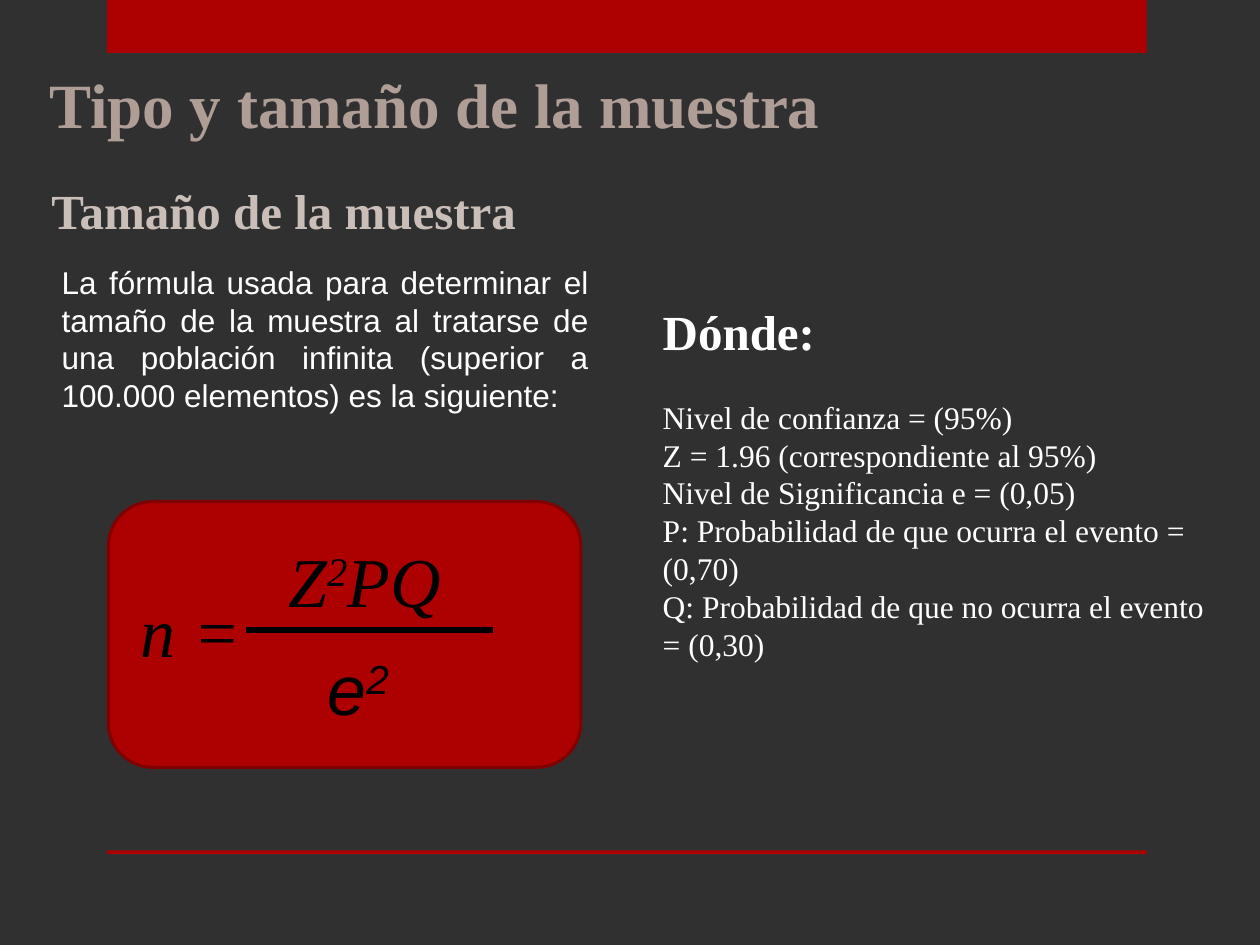
from pptx import Presentation, util as u
from pptx.dml.color import RGBColor
from pptx.enum import shapes, text
from pptx.oxml.ns import qn
from lxml import etree

COLORS = {"bg": "303030", "red": "AD0101", "border": "800101", "title": "AF9E95",
          "subtitle": "CABFB8", "white": "FFFFFF", "black": "000000"}
SERIF, SANS = "Times New Roman", "Arial"
SHAPE = shapes.MSO_SHAPE
TOP, MIDDLE = text.MSO_ANCHOR.TOP, text.MSO_ANCHOR.MIDDLE
LEFT, JUSTIFY = text.PP_ALIGN.LEFT, text.PP_ALIGN.JUSTIFY


def color(name):
    return RGBColor.from_string(COLORS[name])


class Deck:
    """Holds the style and the current slide; lengths are percentages of its size."""

    def __init__(self, width, height):
        self.prs = Presentation()
        self.prs.slide_width, self.prs.slide_height = u.Inches(width), u.Inches(height)
        self.s = self.prs.slides.add_slide(self.prs.slide_layouts[1])
        self.s.background.fill.solid()
        self.s.background.fill.fore_color.rgb = color("bg")

    def x(self, share):
        return round(self.prs.slide_width * share / 100)

    def y(self, share):
        return round(self.prs.slide_height * share / 100)

    def box(self, left, top, width, height):
        return self.x(left), self.y(top), self.x(width), self.y(height)

    def shape(self, kind, area, fill, border=None):
        sp = self.s.shapes.add_shape(kind, *self.box(*area))
        sp.shadow.inherit = False
        sp.fill.solid()
        sp.fill.fore_color.rgb = color(fill)
        if border:
            sp.line.color.rgb = color(border)
            sp.line.width = u.Pt(1.75)
        else:
            sp.line.fill.background()

    def line(self, start, end, name, width):
        c = self.s.shapes.add_connector(shapes.MSO_CONNECTOR.STRAIGHT,
                                        self.x(start[0]), self.y(start[1]),
                                        self.x(end[0]), self.y(end[1]))
        c.line.color.rgb = color(name)
        c.line.width = u.Pt(width)
        etree.SubElement(c._element.spPr, qn("a:effectLst"))

    def frame(self, sp, area, wrap=True, anchor=TOP):
        sp.left, sp.top, sp.width, sp.height = self.box(*area)
        tf = sp.text_frame
        tf.auto_size = text.MSO_AUTO_SIZE.NONE
        tf.word_wrap, tf.vertical_anchor = wrap, anchor
        return tf

    def add_runs(self, p, runs, size, name, font=SERIF, bold=False, italic=False,
                 align=LEFT, before=0):
        """Fill a paragraph; a run that starts with ^ is raised."""
        p.alignment, p.space_before = align, u.Pt(before)
        for part in runs:
            r = p.add_run()
            r.text = part.lstrip("^")
            r.font.name, r.font.size = font, u.Pt(size)
            r.font.bold, r.font.italic = bold, italic
            r.font.color.rgb = color(name)
            if part.startswith("^"):
                r._r.get_or_add_rPr().set("baseline", "30000")

    def title(self, area, words, size, name):
        tf = self.frame(self.s.shapes.title, area, wrap=False)
        self.add_runs(tf.paragraphs[0], [words], size, name, bold=True)

    def text(self, area, runs, size, name, wrap=False, anchor=TOP, **style):
        sp = self.s.shapes.add_textbox(*self.box(*area))
        tf = self.frame(sp, area, wrap, anchor)
        self.add_runs(tf.paragraphs[0], runs, size, name, **style)

    def body(self, area, heading, items, name):
        tf = self.frame(self.s.placeholders[1], area)
        self.add_runs(tf.paragraphs[0], [heading], 28, name, bold=True)
        for i, item in enumerate(items):
            self.add_runs(tf.add_paragraph(), [item], 18, name, before=0 if i else 21.6)
        for p in tf.paragraphs:
            pPr = p._p.get_or_add_pPr()
            pPr.set("marL", "0")
            pPr.set("indent", "0")
            etree.SubElement(pPr, qn("a:buNone"))


def main():
    d = Deck(10, 7.5)
    d.shape(SHAPE.RECTANGLE, (8.5, 0, 82.5, 5.6), "red")
    d.shape(SHAPE.RECTANGLE, (8.5, 90, 82.5, 0.4), "red")
    d.title((2.9, 6.27, 70.1, 9.47), "Tipo y tamaño de la muestra", 36, "title")
    d.text((3.1, 18.4, 43.2, 7.6), ["Tamaño de la muestra"], 28, "subtitle", bold=True)
    d.text((3.9, 27.07, 43.8, 17.47),
           ["La fórmula usada para determinar el tamaño de la muestra al tratarse de una "
            "población infinita (superior a 100.000 elementos) es la siguiente:"],
           18, "white", wrap=True, anchor=MIDDLE, font=SANS, align=JUSTIFY)

    d.shape(SHAPE.ROUNDED_RECTANGLE, (8.6, 53.07, 37.5, 28.13), "red", "border")
    d.text((21.9, 56.27, 15.6, 10.27), ["Z", "^2", "PQ"], 40, "black", italic=True)
    d.text((25, 67.6, 7.8, 10.27), ["e", "^2"], 40, "black", wrap=True, anchor=MIDDLE,
           font=SANS, italic=True, align=JUSTIFY)
    d.text((10.2, 61.47, 10, 10.27), ["n ="], 40, "black", italic=True)
    d.line((19.5, 66.67), (39.1, 66.67), "black", 3)

    d.body((51.6, 31.2, 46.1, 40), "Dónde:",
           ["Nivel de confianza = (95%)",
            "Z = 1.96 (correspondiente al 95%)",
            "Nivel de Significancia e = (0,05)",
            "P: Probabilidad de que ocurra el evento = (0,70)",
            "Q: Probabilidad de que no ocurra el evento = (0,30)"], "white")
    d.prs.save("out.pptx")


if __name__ == "__main__":
    main()
